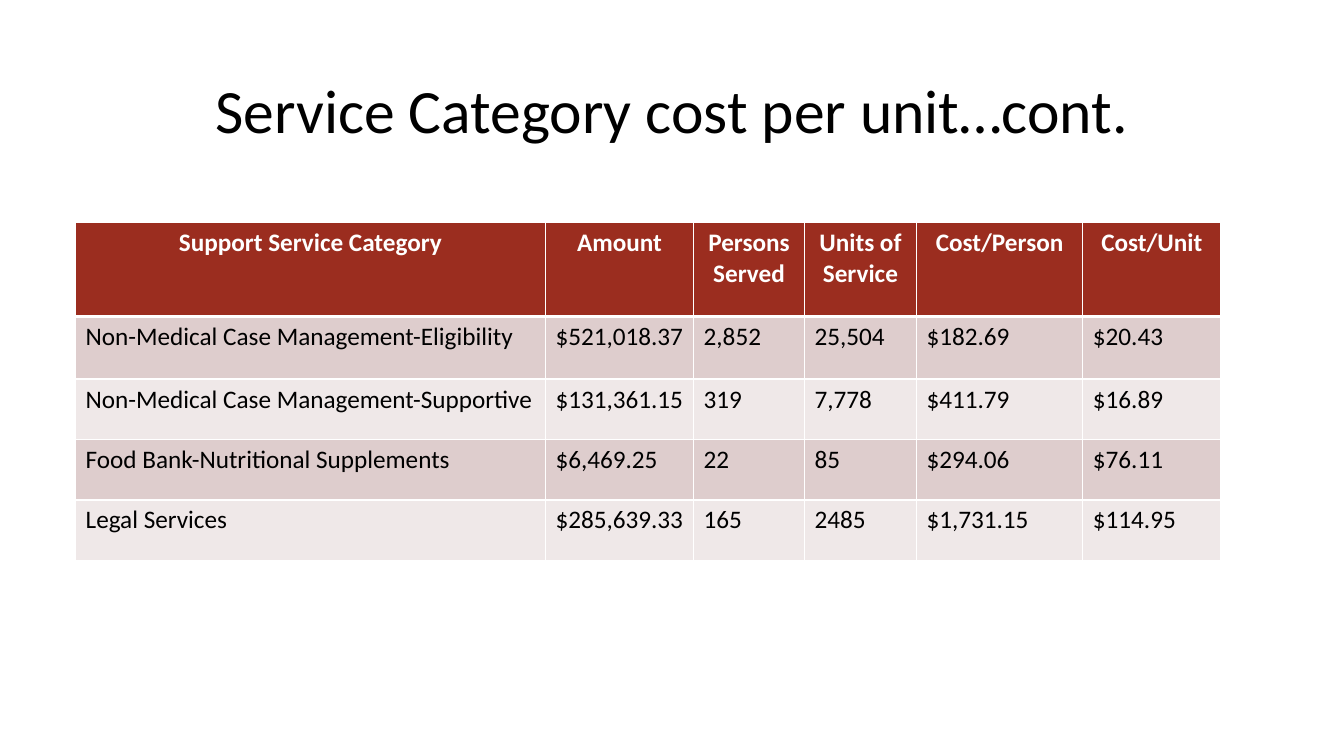
import pptx
import pptx.util
import pptx.dml.color
import pptx.enum.text
import pptx.oxml
import pptx.oxml.ns

Inches = pptx.util.Inches
Align = pptx.enum.text.PP_ALIGN
Anchor = pptx.enum.text.MSO_ANCHOR

HUES = {"ink": "000000", "white": "FFFFFF", "head": "9B2D1F",
        "dark": "DECDCD", "light": "EFE8E8"}

WIDTHS = [4.66, 1.47, 1.1, 1.11, 1.65, 1.37]
HEIGHTS = [0.93, 0.62, 0.6, 0.6, 0.6]
ROWS = [
    ["Support Service Category", "Amount", "Persons Served",
     "Units of Service", "Cost/Person", "Cost/Unit"],
    ["Non-Medical Case Management-Eligibility", "$521,018.37", "2,852",
     "25,504", "$182.69", "$20.43"],
    ["Non-Medical Case Management-Supportive", "$131,361.15", "319",
     "7,778", "$411.79", "$16.89"],
    ["Food Bank-Nutritional Supplements", "$6,469.25", "22",
     "85", "$294.06", "$76.11"],
    ["Legal Services", "$285,639.33", "165",
     "2485", "$1,731.15", "$114.95"],
]


class Page:
    font = "Calibri"

    def __init__(self, slide):
        self.slide = slide

    def color(self, name):
        return pptx.dml.color.RGBColor.from_string(HUES[name])

    def label(self, frame, text, size, hue, align, bold=False):
        para = frame.paragraphs[0]
        para.alignment = align
        run = para.add_run()
        run.text = text
        look = {"name": self.font, "size": pptx.util.Pt(size), "bold": bold}
        for key, value in look.items():
            setattr(run.font, key, value)
        run.font.color.rgb = self.color(hue)
        return para

    def title(self, text, left, top, width, height):
        box = self.slide.shapes.add_textbox(
            Inches(left), Inches(top), Inches(width), Inches(height))
        look = {"word_wrap": True, "vertical_anchor": Anchor.MIDDLE}
        for key, value in look.items():
            setattr(box.text_frame, key, value)
        para = self.label(box.text_frame, text, 44, "ink", Align.CENTER)
        para.line_spacing = 0.9

    def border(self, cell, sides):
        props = cell._tc.get_or_add_tcPr()
        for side, width in sides.items():
            props.append(pptx.oxml.parse_xml(
                f'<a:ln{side} {pptx.oxml.ns.nsdecls("a")} '
                f'w="{pptx.util.Pt(width)}"><a:solidFill>'
                f'<a:srgbClr val="{HUES["white"]}"/>'
                f'</a:solidFill></a:ln{side}>'))

    def table(self, rows, left, top, widths, heights):
        grid = self.slide.shapes.add_table(
            len(rows), len(widths), Inches(left), Inches(top),
            Inches(sum(widths)), Inches(sum(heights))).table
        for col, width in zip(grid.columns, widths):
            col.width = Inches(width)
        for row, height in zip(grid.rows, heights):
            row.height = Inches(height)
        for i, texts in enumerate(rows):
            head = i == 0
            fill = "head" if head else "dark" if i % 2 else "light"
            hue = "white" if head else "ink"
            align = Align.CENTER if head else Align.LEFT
            sides = {"L": 1, "R": 1, "T": 3 if i == 1 else 1,
                     "B": 3 if head else 1}
            for j, text in enumerate(texts):
                cell = grid.cell(i, j)
                self.border(cell, sides)
                cell.fill.solid()
                cell.fill.fore_color.rgb = self.color(fill)
                self.label(cell.text_frame, text, 18, hue, align, head)


def main():
    deck = pptx.Presentation()
    deck.slide_width = Inches(13.33)
    deck.slide_height = Inches(7.5)
    page = Page(deck.slides.add_slide(deck.slide_layouts[6]))
    page.title("Service Category cost per unit…cont.", 0.92, 0.4, 11.5, 1.45)
    page.table(ROWS, 0.75, 2.21, WIDTHS, HEIGHTS)
    deck.save("out.pptx")


if __name__ == "__main__":
    main()
